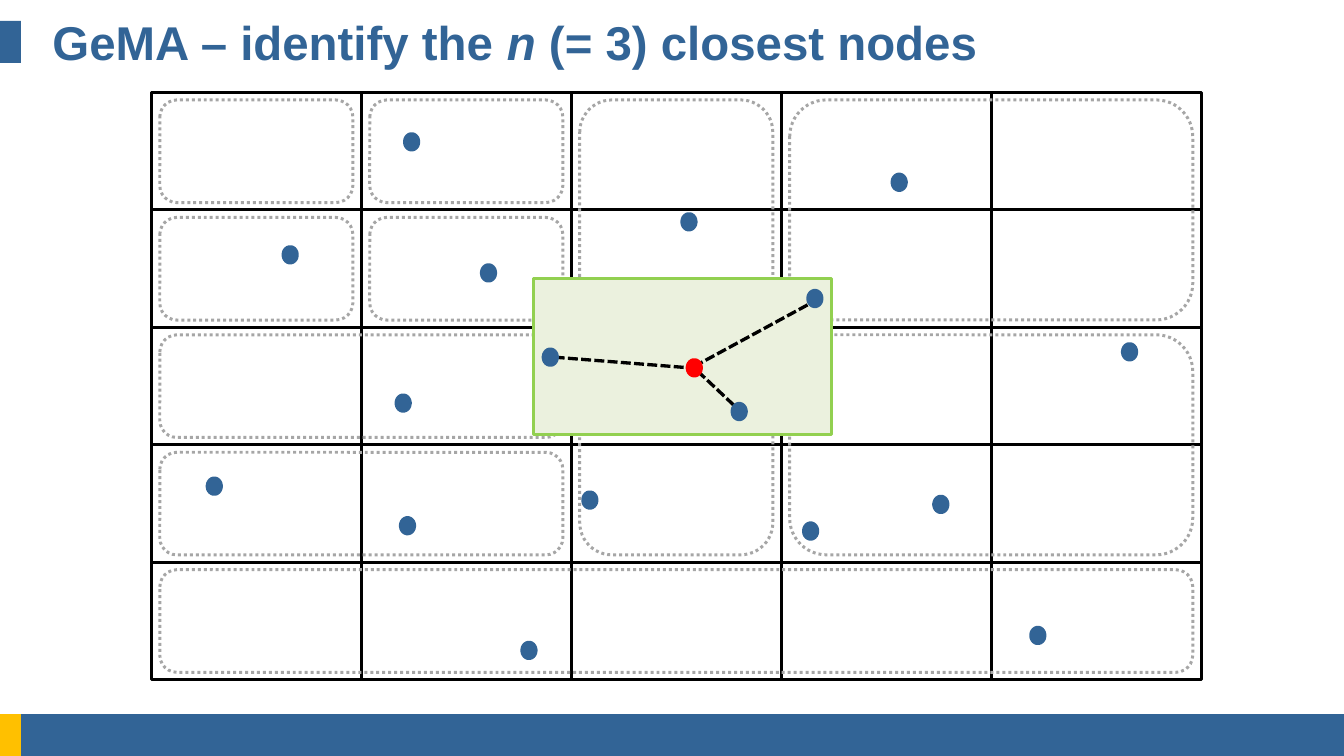
from dataclasses import dataclass
from typing import Optional

from lxml.etree import SubElement
from pptx import Presentation
from pptx.dml.color import RGBColor
from pptx.enum.dml import MSO_LINE
from pptx.enum.shapes import MSO_CONNECTOR, MSO_SHAPE
from pptx.enum.text import MSO_ANCHOR
from pptx.oxml.ns import qn
from pptx.slide import Slide
from pptx.util import Pt

COLORS = {
    "blue": "326496",
    "dot": "4F81BD",
    "gold": "FFC000",
    "grey": "A6A6A6",
    "black": "000000",
    "red": "FF0000",
    "green": "92D050",
    "pale": "EBF1DE",
}
PAGE_WIDTH, PAGE_HEIGHT = 907.2, 510.5
BAR_HEIGHT, TAB_WIDTH, TITLE_TOP = 28.3, 14.2, 14.2
FOOTER_TOP = PAGE_HEIGHT - BAR_HEIGHT
GRID_LEFT, GRID_TOP, GRID_SIZE = 102.2, 62.5, 5
CELL_WIDTH, CELL_HEIGHT = 141.73, 79.3
INSET_X, INSET_Y = 5.7, 5
DOT_WIDTH, DOT_HEIGHT = 5.7, 7.2


@dataclass(frozen=True)
class Style:
    fill: Optional[str] = None
    line: Optional[str] = None
    weight: float = 2
    dash: Optional[MSO_LINE] = None


@dataclass(frozen=True)
class Cluster:
    column: int
    row: int
    columns: int = 1
    rows: int = 1


@dataclass(frozen=True)
class Node:
    left: float
    top: float
    line: str = "blue"


@dataclass(frozen=True)
class Link:
    start_x: float
    start_y: float
    end_x: float
    end_y: float


CELL_STYLE = Style(line="black")
CLUSTER_STYLE = Style(line="grey", dash=MSO_LINE.ROUND_DOT)
SEARCH_STYLE = Style(fill="pale", line="green")

CLUSTERS = [
    Cluster(0, 0), Cluster(1, 0), Cluster(0, 1), Cluster(1, 1),
    Cluster(2, 0, rows=2), Cluster(3, 0, 2, 2),
    Cluster(2, 2, rows=2), Cluster(3, 2, 2, 2),
    Cluster(0, 2, columns=2), Cluster(0, 3, columns=2),
    Cluster(0, 4, columns=5),
]
NODES = [
    Node(275, 92.2), Node(697.7, 425.5), Node(326.9, 180.7),
    Node(462.2, 146.2), Node(544.3, 355), Node(141.8, 324.7),
    Node(604.1, 119.5), Node(272.2, 351.4), Node(759.6, 234),
    Node(354.2, 435.6), Node(632.2, 337), Node(193, 168.5),
    Node(269.3, 268.6), Node(395.3, 334.1),
]
LINKS = [
    Link(470.9, 250.6, 496.8, 275),
    Link(374.4, 241.2, 465.8, 248.4),
    Link(553, 201.6, 470.9, 246.2),
]
CLOSEST_NODES = [
    Node(496.1, 274.3), Node(547.2, 198), Node(368.6, 237.6),
    Node(465.8, 244.8, "red"),
]
TITLE = [("GeMA – identify the ", False), ("n", True), (" (= 3) closest nodes", False)]


def color(name: str) -> RGBColor:
    return RGBColor.from_string(COLORS[name])


def draw_shape(page: Slide, kind: MSO_SHAPE, left: float, top: float,
               width: float, height: float, style: Style) -> None:
    shape = page.shapes.add_shape(kind, Pt(left), Pt(top), Pt(width), Pt(height))
    shape.shadow.inherit = False
    if style.fill:
        shape.fill.solid()
        shape.fill.fore_color.rgb = color(style.fill)
    else:
        shape.fill.background()
    if style.line:
        shape.line.color.rgb = color(style.line)
        shape.line.width = Pt(style.weight)
        if style.dash:
            shape.line.dash_style = style.dash
    else:
        shape.line.fill.background()


def draw_cluster(page: Slide, cluster: Cluster) -> None:
    draw_shape(page, MSO_SHAPE.ROUNDED_RECTANGLE,
               GRID_LEFT + cluster.column * CELL_WIDTH + INSET_X,
               GRID_TOP + cluster.row * CELL_HEIGHT + INSET_Y,
               cluster.columns * CELL_WIDTH - 2 * INSET_X,
               cluster.rows * CELL_HEIGHT - 2 * INSET_Y, CLUSTER_STYLE)


def draw_node(page: Slide, node: Node) -> None:
    draw_shape(page, MSO_SHAPE.FLOWCHART_CONNECTOR, node.left, node.top,
               DOT_WIDTH, DOT_HEIGHT, Style("dot", node.line, 6))


def draw_link(page: Slide, link: Link) -> None:
    connector = page.shapes.add_connector(
        MSO_CONNECTOR.STRAIGHT, Pt(link.start_x), Pt(link.start_y),
        Pt(link.end_x), Pt(link.end_y))
    connector.line.color.rgb = color("black")
    connector.line.width = Pt(2.25)
    connector.line.dash_style = MSO_LINE.SQUARE_DOT
    SubElement(connector._element.spPr, qn("a:effectLst"))


def draw_title(page: Slide) -> None:
    box = page.shapes.add_textbox(Pt(28.3), Pt(TITLE_TOP), Pt(850.4), Pt(BAR_HEIGHT))
    frame = box.text_frame
    frame.word_wrap = True
    frame.vertical_anchor = MSO_ANCHOR.MIDDLE
    para = frame.paragraphs[0]
    for text, italic in TITLE:
        span = para.add_run()
        span.text = text
        span.font.name = "Arial"
        span.font.size = Pt(32)
        span.font.bold = True
        span.font.italic = italic
        span.font.color.rgb = color("blue")


def main() -> None:
    deck = Presentation()
    deck.slide_width, deck.slide_height = Pt(PAGE_WIDTH), Pt(PAGE_HEIGHT)
    page = deck.slides.add_slide(deck.slide_layouts[6])

    draw_shape(page, MSO_SHAPE.RECTANGLE, 0, FOOTER_TOP, PAGE_WIDTH, BAR_HEIGHT, Style("blue"))
    draw_shape(page, MSO_SHAPE.RECTANGLE, 0, FOOTER_TOP, TAB_WIDTH, BAR_HEIGHT, Style("gold"))
    draw_shape(page, MSO_SHAPE.RECTANGLE, 0, TITLE_TOP, TAB_WIDTH, BAR_HEIGHT, Style("blue"))
    draw_title(page)

    for column in range(GRID_SIZE):
        for row in range(GRID_SIZE):
            draw_shape(page, MSO_SHAPE.RECTANGLE,
                       GRID_LEFT + column * CELL_WIDTH, GRID_TOP + row * CELL_HEIGHT,
                       CELL_WIDTH, CELL_HEIGHT, CELL_STYLE)
    for node in NODES:
        draw_node(page, node)
    for cluster in CLUSTERS:
        draw_cluster(page, cluster)

    draw_shape(page, MSO_SHAPE.RECTANGLE, 360, 187.9, 201.6, 105.8, SEARCH_STYLE)
    for link in LINKS:
        draw_link(page, link)
    for node in CLOSEST_NODES:
        draw_node(page, node)

    deck.save("out.pptx")


if __name__ == "__main__":
    main()
